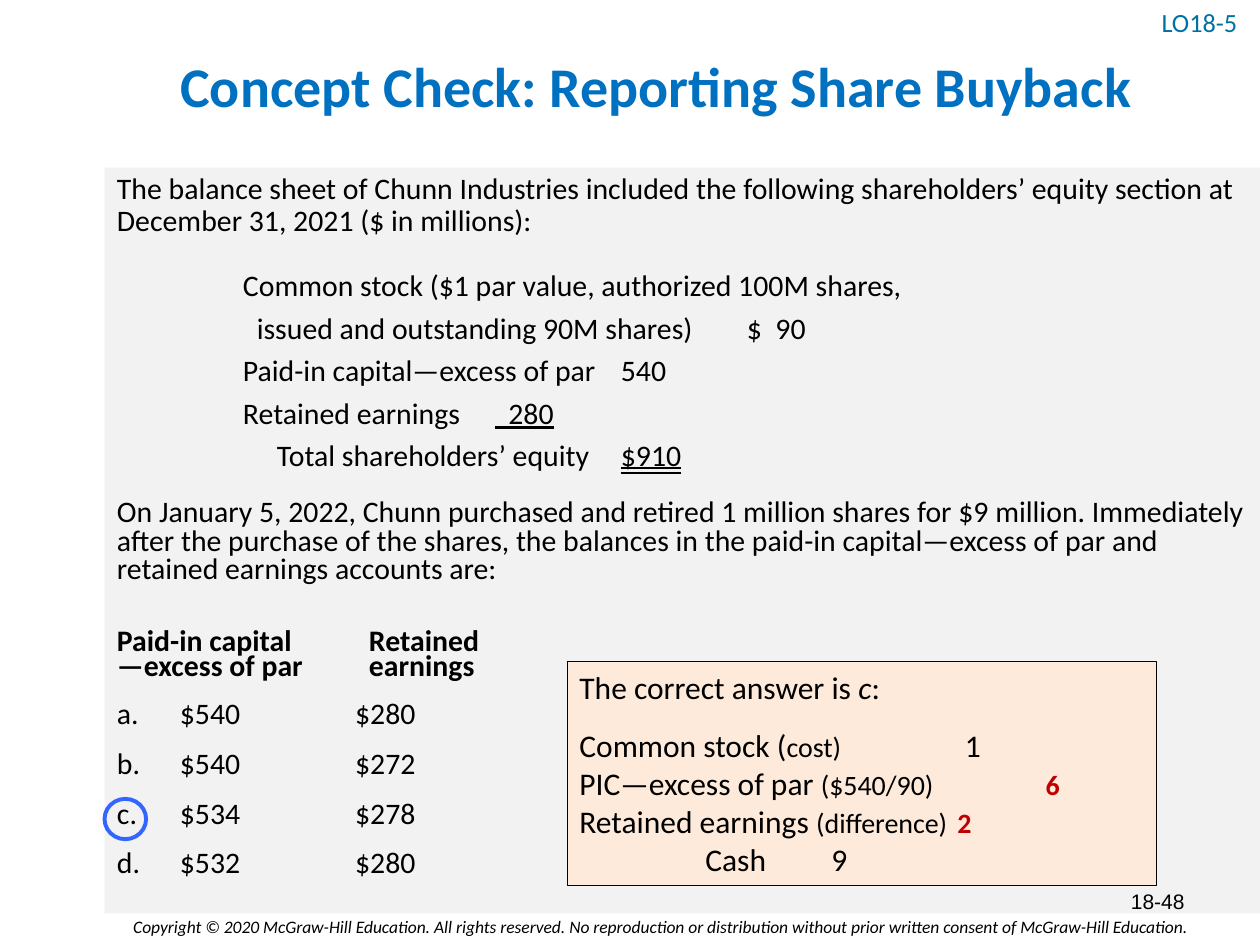
import pptx
import pptx.util
import pptx.dml.color
import pptx.enum.shapes
import pptx.enum.text
import pptx.oxml.ns
from lxml import etree

Inches, Pt = pptx.util.Inches, pptx.util.Pt
ALIGN, ANCHOR = pptx.enum.text.PP_ALIGN, pptx.enum.text.MSO_ANCHOR
SHAPE = pptx.enum.shapes.MSO_SHAPE
UNDERLINE = pptx.enum.text.MSO_UNDERLINE
qn = pptx.oxml.ns.qn


def rgb(value):
    return pptx.dml.color.RGBColor.from_string(value)


def write(p, runs, size, color="000000", tabs=(), bullet=None, font="Calibri", **fmt):
    """Fill a paragraph; runs are (text, font overrides), fmt sets paragraph values."""
    for name, value in fmt.items():
        setattr(p, name, value)
    pPr = p._p.get_or_add_pPr()
    if bullet:
        pPr.set("marL", str(Inches(0.5)))
        pPr.set("indent", str(-Inches(0.5)))
        etree.SubElement(pPr, qn("a:buFont"), typeface="+mj-lt")
        etree.SubElement(pPr, qn("a:buAutoNum"), type=bullet)
    if tabs:
        tab_list = etree.SubElement(pPr, qn("a:tabLst"))
        for pos in tabs:
            etree.SubElement(tab_list, qn("a:tab"), pos=str(Inches(pos)), algn="l")
    for text, look in runs:
        r = p.add_run()
        r.text = text
        values = {"name": font, "size": Pt(size), **look}
        r.font.color.rgb = rgb(values.pop("color", color))
        for name, value in values.items():
            setattr(r.font, name, value)


prs = pptx.Presentation()
prs.slide_width, prs.slide_height = Inches(10), Inches(7.5)
s = prs.slides.add_slide(prs.slide_layouts[5])

# Title
title = s.shapes.title
title.left, title.top, title.width, title.height = map(Inches, (0.83, 0.19, 8.76, 1.03))
title.text_frame.vertical_anchor = ANCHOR.MIDDLE
write(title.text_frame.paragraphs[0], [("Concept Check: Reporting Share Buyback", {"bold": True})],
      32, "0070C0", alignment=ALIGN.CENTER, line_spacing=0.9)

# Grey question panel, answer box and ring around the correct choice
panels = []
for kind, box, fill, line, width in [
    (SHAPE.RECTANGLE, (0.83, 1.33, 9.17, 5.92), "F2F2F2", None, 0),
    (SHAPE.OVAL, (0.83, 6.34, 0.33, 0.32), None, "3366FF", 2.25),
    (SHAPE.RECTANGLE, (4.5, 5.25, 4.68, 1.78), "FDEADA", "000000", 0.5),
]:
    sp = s.shapes.add_shape(kind, *map(Inches, box))
    sp.shadow.inherit = False
    if fill:
        sp.fill.solid()
        sp.fill.fore_color.rgb = rgb(fill)
    else:
        sp.fill.background()
    if line:
        sp.line.color.rgb = rgb(line)
        sp.line.width = Pt(width)
    else:
        sp.line.fill.background()
    sp.text_frame.word_wrap = True
    sp.text_frame.vertical_anchor = ANCHOR.TOP
    panels.append(sp)
question, ring, answer = panels

# Question: text, equity section, choices
equity = {"line_spacing": 0.7, "space_before": Pt(10)}
choice = {"line_spacing": 0.9, "space_before": Pt(10), "tabs": [1.89], "bullet": "alphaLcPeriod"}
paragraphs = [
    ([("The balance sheet of Chunn Industries included the following shareholders’ equity "
       "section at December 31, 2021 ($ in millions):", {})],
     {"line_spacing": 0.9, "space_after": Pt(12)}),
    ([("\tCommon stock ($1 par value, authorized 100M shares,", {})], {**equity, "tabs": [1]}),
    ([("\tissued and outstanding 90M shares)\t$  90", {})], {**equity, "tabs": [1.11, 5]}),
    ([("\tPaid-in capital—excess of par\t540", {})], {**equity, "tabs": [1, 4]}),
    ([("\tRetained earnings\t", {}), ("  280", {"underline": True})], {**equity, "tabs": [1, 3]}),
    ([("\tTotal shareholders’ equity\t", {}), ("$910", {"underline": UNDERLINE.DOUBLE_LINE})],
     {**equity, "tabs": [1.27, 4], "space_after": Pt(6)}),
    ([("On January 5, 2022, Chunn purchased and retired 1 million shares for $9 million. "
       "Immediately after the purchase of the shares, the balances in the paid-in "
       "capital—excess of par and retained earnings accounts are:", {})],
     {"line_spacing": 0.8, "space_before": Pt(10)}),
]
heading = {"line_spacing": 0.7, "tabs": [2]}
for text, gap in [("Paid-in capital\tRetained", 26.5), ("—excess of par\tearnings", 0)]:
    paragraphs.append(([(text, {"bold": True})], {**heading, "space_before": Pt(gap)}))
for paid_in, retained in [(540, 280), (540, 272), (534, 278), (532, 280)]:
    paragraphs.append(([(f"${paid_in}\t${retained}", {})], choice))

# Answer: journal entry
small = {"size": Pt(16)}
amount = {"size": Pt(16), "bold": True, "color": "C00000"}
entry = [
    ([("The correct answer is ", {}), ("c", {"italic": True}), (":", {})], {"space_after": Pt(12)}),
    ([("Common stock (", {}), ("cost)", small), ("\t1", {})], {"tabs": [3.06]}),
    ([("PIC—excess of par ", {}), ("($540/90)\t", small), ("6", amount)], {"tabs": [3.7]}),
    ([("Retained earnings ", {}), ("(difference)\t", small), ("2", amount)], {"tabs": [3]}),
    ([("\tCash\t9", {})], {"tabs": [1, 2]}),
]
for sp, lines, size in [(question, paragraphs, 17), (answer, entry, 18)]:
    tf = sp.text_frame
    for i, (runs, fmt) in enumerate(lines):
        p = tf.add_paragraph() if i else tf.paragraphs[0]
        write(p, runs, size, **{"alignment": ALIGN.LEFT, **fmt})

# Learning objective, page number and copyright line
for text, box, size, color, font, align, look in [
    ("LO18-5", (9.12, 0, 0.98, 0.35), 15, "0072A2", "Calibri", ALIGN.LEFT, {}),
    ("18-48", (7.17, 6.95, 2.33, 0.4), 12, "000000", "Arial", ALIGN.RIGHT, {}),
    ("Copyright © 2020 McGraw-Hill Education. All rights reserved. No reproduction or "
     "distribution without prior written consent of McGraw-Hill Education.",
     (0.45, 7.22, 9.07, 0.27), 10, "000000", "Calibri", ALIGN.RIGHT, {"italic": True}),
]:
    tf = s.shapes.add_textbox(*map(Inches, box)).text_frame
    tf.word_wrap = True
    tf.vertical_anchor = ANCHOR.MIDDLE
    write(tf.paragraphs[0], [(text, look)], size, color, font=font, alignment=align)

prs.save("out.pptx")
